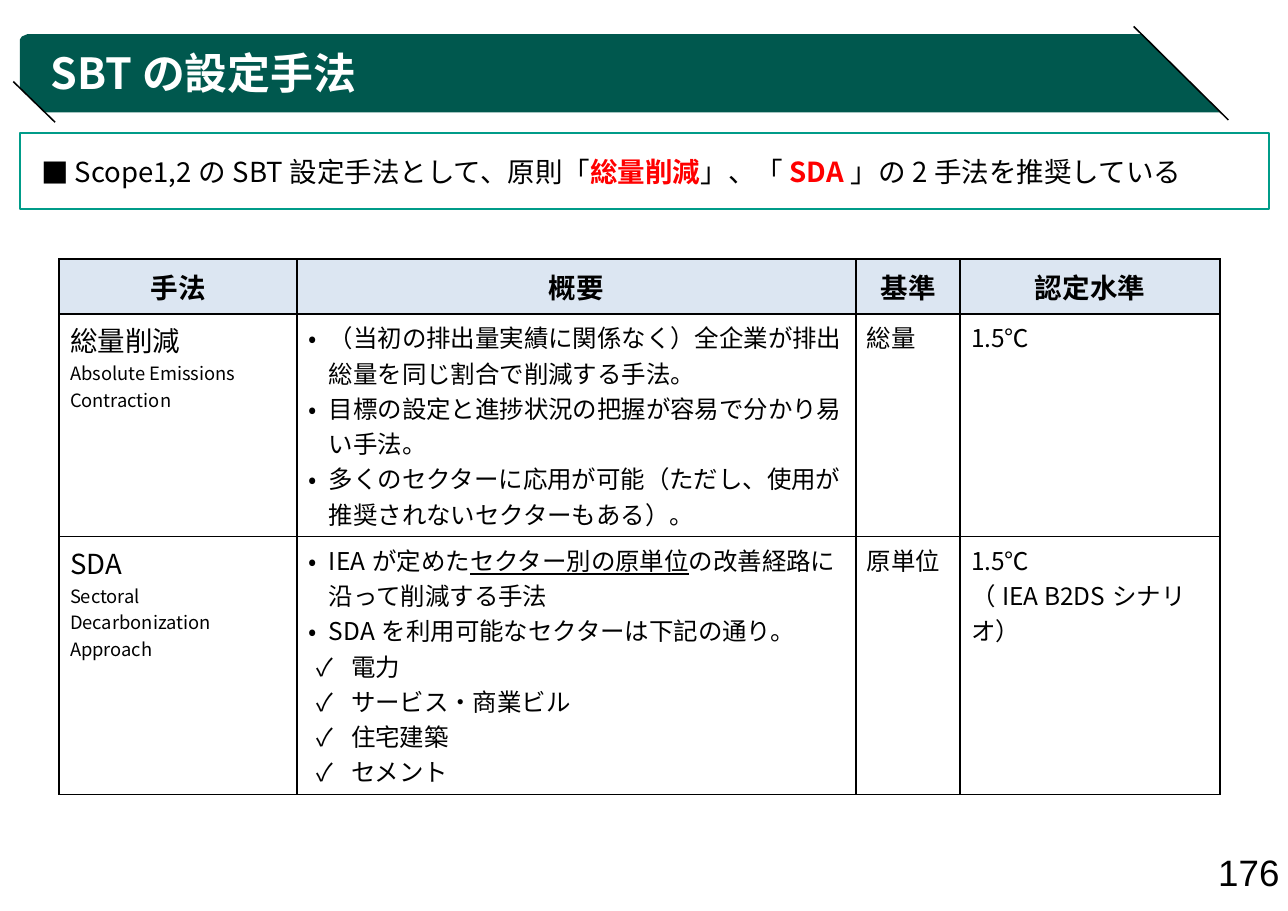
import pptx
import pptx.dml.color
import pptx.enum.shapes
import pptx.enum.text
import pptx.oxml.ns
import pptx.util
from lxml import etree

COLORS = {"banner": "00584E", "frame": "009C89", "header": "DCE6F2",
          "text": "000000", "accent": "FF0000", "title": "FFFFFF"}
FONT = "Noto Sans CJK JP"
PAGE_WIDTH = pptx.util.Inches(11.69)
PAGE_HEIGHT = pptx.util.Inches(8.27)
ALIGN = pptx.enum.text.PP_ALIGN
ANCHOR = pptx.enum.text.MSO_ANCHOR

# Bullet kinds: character, left margin and hanging indent in inches
BULLETS = {"square": ("■", 0.3, 0.3), "dot": ("•", 0.19, 0.19),
           "check": ("✓", 0.39, 0.31)}

# Column widths and row heights as percentages of the page
COLUMNS = (18.48, 43.4, 8.08, 20.19)
ROWS = (6.05, 24.43, 28.3)

# A paragraph is (bullet kind, size, texts); "_" before a text underlines it
HEADINGS = ("手法", "概要", "基準", "認定水準")
METHODS = (
    (
        ((None, 18, ["総量削減"]), (None, 12, ["Absolute Emissions"]),
         (None, 12, ["Contraction"])),
        (("dot", 16, ["（当初の排出量実績に関係なく）全企業が排出総量を同じ割合で削減する手法。"]),
         ("dot", 16, ["目標の設定と進捗状況の把握が容易で分かり易い手法。"]),
         ("dot", 16, ["多くのセクターに応用が可能（ただし、使用が推奨されないセクターもある）。"])),
        ((None, 16, ["総量"]),),
        ((None, 16, ["1.5℃"]),),
    ),
    (
        ((None, 18, ["SDA"]), (None, 12, ["Sectoral"]),
         (None, 12, ["Decarbonization"]), (None, 12, ["Approach"])),
        (("dot", 16, ["IEAが定めた", "_セクター別の原単位", "の改善経路に沿って削減する手法"]),
         ("dot", 16, ["SDAを利用可能なセクターは下記の通り。"]),
         *(("check", 16, [sector])
           for sector in ("電力", "サービス・商業ビル", "住宅建築", "セメント"))),
        ((None, 16, ["原単位"]),),
        ((None, 16, ["1.5℃"]), (None, 16, ["（IEA B2DSシナリオ）"])),
    ),
)


def across(percent):
    return round(PAGE_WIDTH * percent / 100)


def down(percent):
    return round(PAGE_HEIGHT * percent / 100)


def area(left, top, width, height):
    return across(left), down(top), across(width), down(height)


def color(name):
    return pptx.dml.color.RGBColor.from_string(COLORS[name])


def add_xml(parent, tag, **attributes):
    return etree.SubElement(parent, pptx.oxml.ns.qn(tag), attributes)


def add_run(para, text, size, color_name="text", bold=False, underline=False, font=FONT):
    span = para.add_run()
    span.text = text
    span.font.size = pptx.util.Pt(size)
    span.font.bold = bold
    span.font.underline = underline
    span.font.color.rgb = color(color_name)
    span.font.name = font
    add_xml(span.font._element, "a:ea", typeface=font)


def set_bullet(para, kind):
    character, margin, hanging = BULLETS[kind]
    properties = para._p.get_or_add_pPr()
    properties.set("marL", str(pptx.util.Inches(margin)))
    properties.set("indent", str(-pptx.util.Inches(hanging)))
    add_xml(properties, "a:buFont", typeface=FONT)
    add_xml(properties, "a:buChar", char=character)


def set_frame(frame, left=0, top=0, right=0, bottom=0, anchor=ANCHOR.MIDDLE, wrap=True):
    frame.margin_left, frame.margin_top = pptx.util.Inches(left), pptx.util.Inches(top)
    frame.margin_right, frame.margin_bottom = pptx.util.Inches(right), pptx.util.Inches(bottom)
    frame.vertical_anchor = anchor
    frame.word_wrap = wrap
    frame.auto_size = pptx.enum.text.MSO_AUTO_SIZE.NONE


def add_stroke(page, x1, y1, x2, y2):
    line = page.shapes.add_connector(pptx.enum.shapes.MSO_CONNECTOR.STRAIGHT,
                                     across(x1), down(y1), across(x2), down(y2))
    line.line.color.rgb = color("text")
    line.line.width = pptx.util.Pt(1)
    add_xml(line._element.spPr, "a:effectLst")


def add_banner(page):
    outline = [(3.51, 12.33), (94.7, 12.33), (88.71, 3.75), (2.14, 3.75),
               (1.71, 4.0), (1.54, 4.35), (1.54, 9.67)]
    points = [(across(x), down(y)) for x, y in outline]
    builder = page.shapes.build_freeform(*points[0])
    builder.add_line_segments(points[1:], close=True)
    banner = builder.convert_to_shape()
    banner.shadow.inherit = False
    banner.fill.solid()
    banner.fill.fore_color.rgb = color("banner")
    banner.line.fill.background()
    add_stroke(page, 88.02, 2.9, 95.38, 13.18)
    add_stroke(page, 1.03, 8.95, 4.28, 13.42)


def set_title(page):
    title = page.shapes.title
    title.left, title.top, title.width, title.height = area(1.54, 3.75, 86.91, 8.59)
    # Bring the title in front of the banner
    page.shapes._spTree.append(title._element)
    set_frame(title.text_frame, left=0.28, top=0.04)
    para = title.text_frame.paragraphs[0]
    para.alignment = ALIGN.LEFT
    para.line_spacing = 0.9
    add_run(para, "SBTの設定手法", 28, "title", bold=True)


def add_message(page):
    box = page.shapes.add_shape(pptx.enum.shapes.MSO_SHAPE.RECTANGLE,
                                *area(1.54, 14.63, 97.01, 8.34))
    box.shadow.inherit = False
    box.fill.background()
    box.line.color.rgb = color("frame")
    box.line.width = pptx.util.Pt(1.5)
    set_frame(box.text_frame, left=0.2, right=0.2)
    para = box.text_frame.paragraphs[0]
    para.alignment = ALIGN.LEFT
    set_bullet(para, "square")
    pieces = ("Scope1,2のSBT設定手法として、原則「", "総量削減", "」、「", "SDA",
              "」の2手法を推奨している")
    for index, piece in enumerate(pieces):
        stressed = index % 2 == 1
        add_run(para, piece, 18, "accent" if stressed else "text", bold=stressed)


def set_borders(cell):
    properties = cell._tc.get_or_add_tcPr()
    for side in ("L", "R", "T", "B"):
        border = add_xml(properties, f"a:ln{side}", w=str(pptx.util.Pt(1)))
        add_xml(add_xml(border, "a:solidFill"), "a:srgbClr", val=COLORS["text"])


def fill_cell(cell, paragraphs, heading=False):
    set_borders(cell)
    if heading:
        cell.fill.solid()
        cell.fill.fore_color.rgb = color("header")
    else:
        cell.fill.background()
    cell.vertical_anchor = ANCHOR.MIDDLE if heading else ANCHOR.TOP
    for index, (bullet, size, texts) in enumerate(paragraphs):
        frame = cell.text_frame
        para = frame.add_paragraph() if index else frame.paragraphs[0]
        para.alignment = ALIGN.CENTER if heading else ALIGN.LEFT
        if bullet:
            set_bullet(para, bullet)
        for text in texts:
            add_run(para, text.lstrip("_"), size, bold=heading,
                    underline=text.startswith("_"))


def add_methods(page):
    table = page.shapes.add_table(len(ROWS), len(COLUMNS),
                                  *area(4.58, 28.42, sum(COLUMNS), sum(ROWS))).table
    table.horz_banding = False
    for column, width in zip(table.columns, COLUMNS):
        column.width = across(width)
    for row, height in zip(table.rows, ROWS):
        row.height = down(height)
    headings = [((None, 18, [heading]),) for heading in HEADINGS]
    for row_index, contents in enumerate((headings, *METHODS)):
        for column_index, paragraphs in enumerate(contents):
            fill_cell(table.cell(row_index, column_index), paragraphs, row_index == 0)


def add_page_number(page):
    box = page.shapes.add_textbox(*area(95.3, 93.35, 3.34, 4.72))
    set_frame(box.text_frame, anchor=ANCHOR.BOTTOM, wrap=False)
    para = box.text_frame.paragraphs[0]
    para.alignment = ALIGN.CENTER
    add_run(para, "176", 24, font="Arial")


def main():
    deck = pptx.Presentation()
    deck.slide_width, deck.slide_height = PAGE_WIDTH, PAGE_HEIGHT
    page = deck.slides.add_slide(deck.slide_layouts.get_by_name("Title Only"))
    add_banner(page)
    set_title(page)
    add_message(page)
    add_methods(page)
    add_page_number(page)
    deck.save("out.pptx")


if __name__ == "__main__":
    main()
